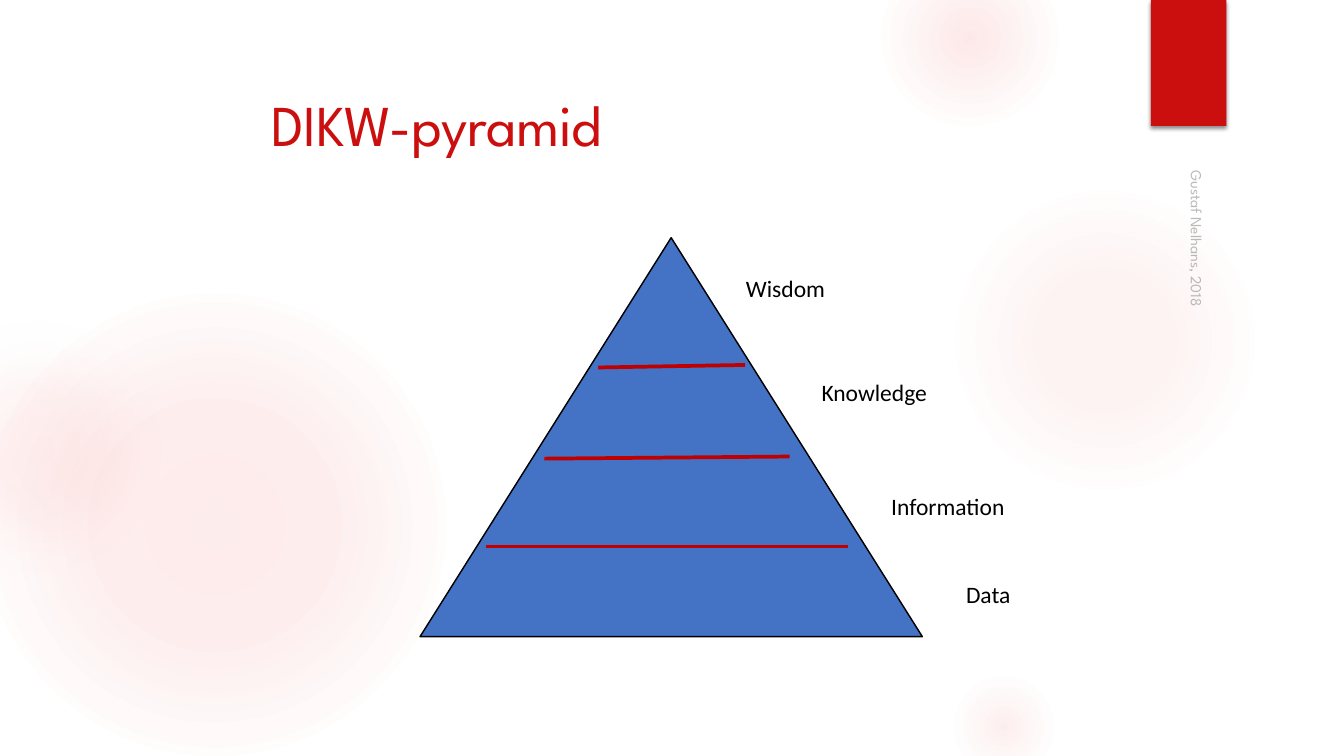
from dataclasses import dataclass

from lxml import etree
from pptx import Presentation
from pptx.dml.color import RGBColor
from pptx.enum.shapes import MSO_CONNECTOR, MSO_SHAPE
from pptx.enum.text import MSO_ANCHOR
from pptx.oxml import parse_xml
from pptx.oxml.ns import nsdecls, qn
from pptx.util import Inches, Pt

OVAL = MSO_SHAPE.OVAL
RECTANGLE = MSO_SHAPE.RECTANGLE
TRIANGLE = MSO_SHAPE.ISOSCELES_TRIANGLE
STRAIGHT = MSO_CONNECTOR.STRAIGHT
TOP, BOTTOM = MSO_ANCHOR.TOP, MSO_ANCHOR.BOTTOM

WIDTH, HEIGHT = Inches(13.33), Inches(7.5)
COLUMNS, ROWS = 160, 90
COLORS = {
    "glow": "F35C5C",
    "glow_edge": "F3F3F3",
    "tab": "CB0F0F",
    "pyramid": "4472C4",
    "divider": "C00000",
    "ink": "000000",
    "credit": "8C8C8C",
}
HEADING_FONT, LABEL_FONT = "League Spartan", "Calibri"


@dataclass(frozen=True)
class Area:
    column: float
    row: float
    columns: float
    rows: float

    def frame(self) -> tuple:
        return (across(self.column), down(self.row),
                across(self.columns), down(self.rows))


@dataclass(frozen=True)
class Glow:
    column: float
    row: float
    size: float
    center_alpha: int
    middle: int
    middle_alpha: int
    edge: int
    edge_color: str = "glow"


@dataclass(frozen=True)
class Divider:
    right: float
    right_row: float
    left: float
    left_row: float


@dataclass(frozen=True)
class Label:
    text: str
    area: Area
    size: float = 16.8
    font: str = LABEL_FONT
    color: str = "ink"
    alpha: int = 100
    spacing: int = 0
    rotation: int = 0
    anchor: MSO_ANCHOR = TOP
    inset: tuple = (0, 0.02, 0, 0)


GLOWS = [
    Glow(-2, 35, 55, 11, 36, 10, 75),
    Glow(-11, 38, 31, 8, 36, 5, 71, "glow_edge"),
    Glow(113, 22, 37, 7, 36, 6, 69),
    Glow(105, -6, 21, 14, 36, 7, 73),
    Glow(113, 80, 13, 10, 31, 5, 66),
]
TAB = Area(137, 0, 9, 15)
PYRAMID = Area(50, 28.3, 59.8, 47.5)
DIVIDERS = [
    Divider(88.7, 43.45, 71.2, 43.75),
    Divider(94, 54.35, 64.8, 54.6),
    Divider(101, 65.05, 57.8, 65.05),
]
LABELS = [
    Label("DIKW-pyramid", Area(32.3, 10.3, 40.1, 16.8), 41.3,
          HEADING_FONT, "tab", spacing=-30),
    Label("Wisdom", Area(88.8, 32.4, 9.8, 3.6)),
    Label("Knowledge", Area(97.8, 44.7, 13, 3.6)),
    Label("Information", Area(106.1, 58.3, 14.4, 3.6)),
    Label("Data", Area(115, 68.8, 5.6, 3.6)),
    Label("Gustaf Nelhans, 2018", Area(117.5, 42.4, 50.6, 4), 11,
          HEADING_FONT, "credit", 60, rotation=90, anchor=BOTTOM,
          inset=(0.1, 0.05, 0.1, 0.05)),
]


def across(columns: float) -> int:
    return round(WIDTH * columns / COLUMNS)


def down(rows: float) -> int:
    return round(HEIGHT * rows / ROWS)


def color(name: str) -> RGBColor:
    return RGBColor.from_string(COLORS[name])


def add_solid(page, preset, area: Area, fill: str):
    shape = page.shapes.add_shape(preset, *area.frame())
    shape.shadow.inherit = False
    shape.fill.solid()
    shape.fill.fore_color.rgb = color(fill)
    shape.line.fill.background()
    return shape


def add_glow(page, glow: Glow) -> None:
    area = Area(glow.column, glow.row, glow.size, glow.size)
    shape = add_solid(page, OVAL, area, "glow")
    stops = [(0, "glow", glow.center_alpha), (glow.middle, "glow", glow.middle_alpha),
             (glow.edge, glow.edge_color, 0)]
    stop_xml = "".join(
        f'<a:gs pos="{place * 1000}"><a:srgbClr val="{COLORS[name]}">'
        f'<a:alpha val="{alpha * 1000}"/></a:srgbClr></a:gs>'
        for place, name, alpha in stops)
    gradient = parse_xml(
        f'<a:gradFill {nsdecls("a")} rotWithShape="1"><a:gsLst>{stop_xml}</a:gsLst>'
        '<a:path path="circle"><a:fillToRect l="50000" t="50000" r="50000" b="50000"/>'
        '</a:path></a:gradFill>')
    properties = shape._element.spPr
    properties.replace(properties.find(qn("a:solidFill")), gradient)


def add_tab(page) -> None:
    tab = add_solid(page, RECTANGLE, TAB, "tab")
    tab._element.spPr.find(qn("a:effectLst")).append(parse_xml(
        f'<a:outerShdw {nsdecls("a")} blurRad="{Pt(3)}" dist="{Pt(2)}" dir="5400000" '
        f'rotWithShape="0"><a:srgbClr val="{COLORS["ink"]}"><a:alpha val="45000"/>'
        '</a:srgbClr></a:outerShdw>'))


def add_pyramid(page) -> None:
    pyramid = add_solid(page, TRIANGLE, PYRAMID, "pyramid")
    pyramid.line.color.rgb = color("ink")
    pyramid.line.width = Pt(1.03)


def add_divider(page, divider: Divider) -> None:
    line = page.shapes.add_connector(
        STRAIGHT, across(divider.right), down(divider.right_row),
        across(divider.left), down(divider.left_row))
    line.line.color.rgb = color("divider")
    line.line.width = Pt(2.67)
    etree.SubElement(line._element.spPr, qn("a:effectLst"))


def add_label(page, label: Label) -> None:
    box = page.shapes.add_textbox(*label.area.frame())
    box.rotation = label.rotation
    frame = box.text_frame
    frame.word_wrap = False
    frame.vertical_anchor = label.anchor
    (frame.margin_left, frame.margin_top,
     frame.margin_right, frame.margin_bottom) = map(Inches, label.inset)
    frame.text = label.text
    span = frame.paragraphs[0].runs[0]
    span.font.name = label.font
    span.font.size = Pt(label.size)
    span.font.color.rgb = color(label.color)
    if label.spacing:
        span._r.get_or_add_rPr().set("spc", str(label.spacing))
    if label.alpha < 100:
        tint = span._r.rPr.find(qn("a:solidFill")).find(qn("a:srgbClr"))
        etree.SubElement(tint, qn("a:alpha")).set("val", str(label.alpha * 1000))


def main() -> None:
    deck = Presentation()
    deck.slide_width, deck.slide_height = WIDTH, HEIGHT
    page = deck.slides.add_slide(deck.slide_layouts[6])
    for glow in GLOWS:
        add_glow(page, glow)
    add_tab(page)
    add_pyramid(page)
    for divider in DIVIDERS:
        add_divider(page, divider)
    for label in LABELS:
        add_label(page, label)
    deck.save("out.pptx")


if __name__ == "__main__":
    main()
